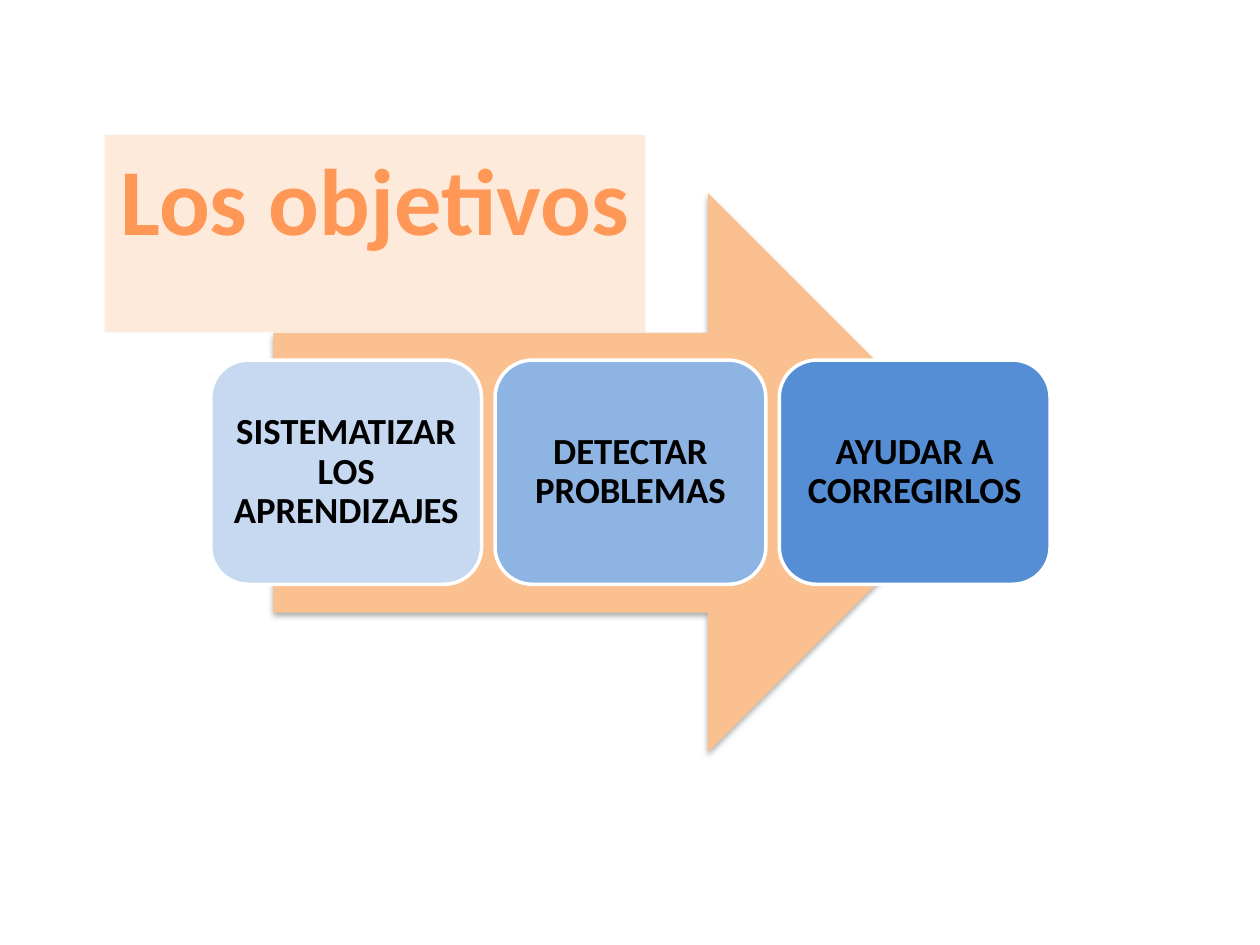
from lxml import etree
from pptx import Presentation
from pptx.dml.color import RGBColor
from pptx.enum.shapes import MSO_SHAPE
from pptx.enum.text import MSO_ANCHOR, MSO_AUTO_SIZE, PP_ALIGN
from pptx.oxml.ns import qn
from pptx.util import Cm, Pt

ARROW = MSO_SHAPE.RIGHT_ARROW
ROUNDED = MSO_SHAPE.ROUNDED_RECTANGLE
CENTER = PP_ALIGN.CENTER
TOP = MSO_ANCHOR.TOP
MIDDLE = MSO_ANCHOR.MIDDLE
FIT_SHAPE = MSO_AUTO_SIZE.SHAPE_TO_FIT_TEXT

COLORS = {
    "title": "FF9856",
    "title_band": "FDEADA",
    "arrow": "FAC090",
    "border": "FFFFFF",
    "text": "000000",
    "light": "C6D9F1",
    "medium": "8EB4E3",
    "strong": "558ED5",
}

GOALS = [
    ("SISTEMATIZAR LOS APRENDIZAJES", "light"),
    ("DETECTAR PROBLEMAS", "medium"),
    ("AYUDAR A CORREGIRLOS", "strong"),
]
CARD_LEFT, CARD_TOP = 4.25, 7.26
CARD_WIDTH, CARD_HEIGHT = 5.46, 4.52
CARD_GAP = 0.27


class SlideBuilder:
    font = "Calibri"

    def __init__(self, slide):
        self.slide = slide

    def color(self, name):
        return RGBColor.from_string(COLORS[name])

    def fill(self, shape, name):
        shape.fill.solid()
        shape.fill.fore_color.rgb = self.color(name)

    def add_text(self, paragraph, text, size, color):
        paragraph.alignment = CENTER
        run = paragraph.add_run()
        run.text = text
        run.font.name = self.font
        run.font.size = Pt(size)
        run.font.bold = True
        run.font.color.rgb = self.color(color)

    def title(self, text, left, top, width, height):
        heading = self.slide.shapes.title
        heading.left, heading.top = Cm(left), Cm(top)
        heading.width, heading.height = Cm(width), Cm(height)
        self.fill(heading, "title_band")
        frame = heading.text_frame
        frame.word_wrap = False
        frame.auto_size = FIT_SHAPE
        frame.vertical_anchor = TOP
        self.add_text(frame.paragraphs[0], text, 54, "title")

    def shape(self, kind, left, top, width, height, fill):
        shape = self.slide.shapes.add_shape(
            kind, Cm(left), Cm(top), Cm(width), Cm(height))
        shape.shadow.inherit = False
        self.fill(shape, fill)
        return shape

    def arrow(self, left, top, width, height):
        arrow = self.shape(ARROW, left, top, width, height, "arrow")
        arrow.line.fill.background()
        effects = arrow.element.spPr.find(qn("a:effectLst"))
        shadow = etree.SubElement(
            effects, qn("a:outerShdw"), blurRad=str(Pt(3.5)),
            dist=str(Pt(2.2)), dir="5400000", rotWithShape="0")
        black = etree.SubElement(shadow, qn("a:srgbClr"), val="000000")
        etree.SubElement(black, qn("a:alpha"), val="32000")

    def card(self, text, left, top, width, height, fill):
        card = self.shape(ROUNDED, left, top, width, height, fill)
        card.line.color.rgb = self.color("border")
        card.line.width = Pt(2)
        frame = card.text_frame
        frame.word_wrap = True
        frame.vertical_anchor = MIDDLE
        frame.margin_left = frame.margin_right = Cm(0.23)
        frame.margin_top = frame.margin_bottom = Cm(0.23)
        paragraph = frame.paragraphs[0]
        paragraph.line_spacing = 0.9
        self.add_text(paragraph, text, 21, "text")


def main():
    deck = Presentation()
    deck.slide_width, deck.slide_height = Cm(25.4), Cm(19.05)
    builder = SlideBuilder(deck.slides.add_slide(deck.slide_layouts[5]))
    builder.title("Los objetivos", 2.11, 2.72, 10.9, 2.56)
    builder.arrow(5.51, 3.89, 14.4, 11.28)
    for index, (goal, fill) in enumerate(GOALS):
        left = CARD_LEFT + index * (CARD_WIDTH + CARD_GAP)
        builder.card(goal, left, CARD_TOP, CARD_WIDTH, CARD_HEIGHT, fill)
    deck.save("out.pptx")


if __name__ == "__main__":
    main()
